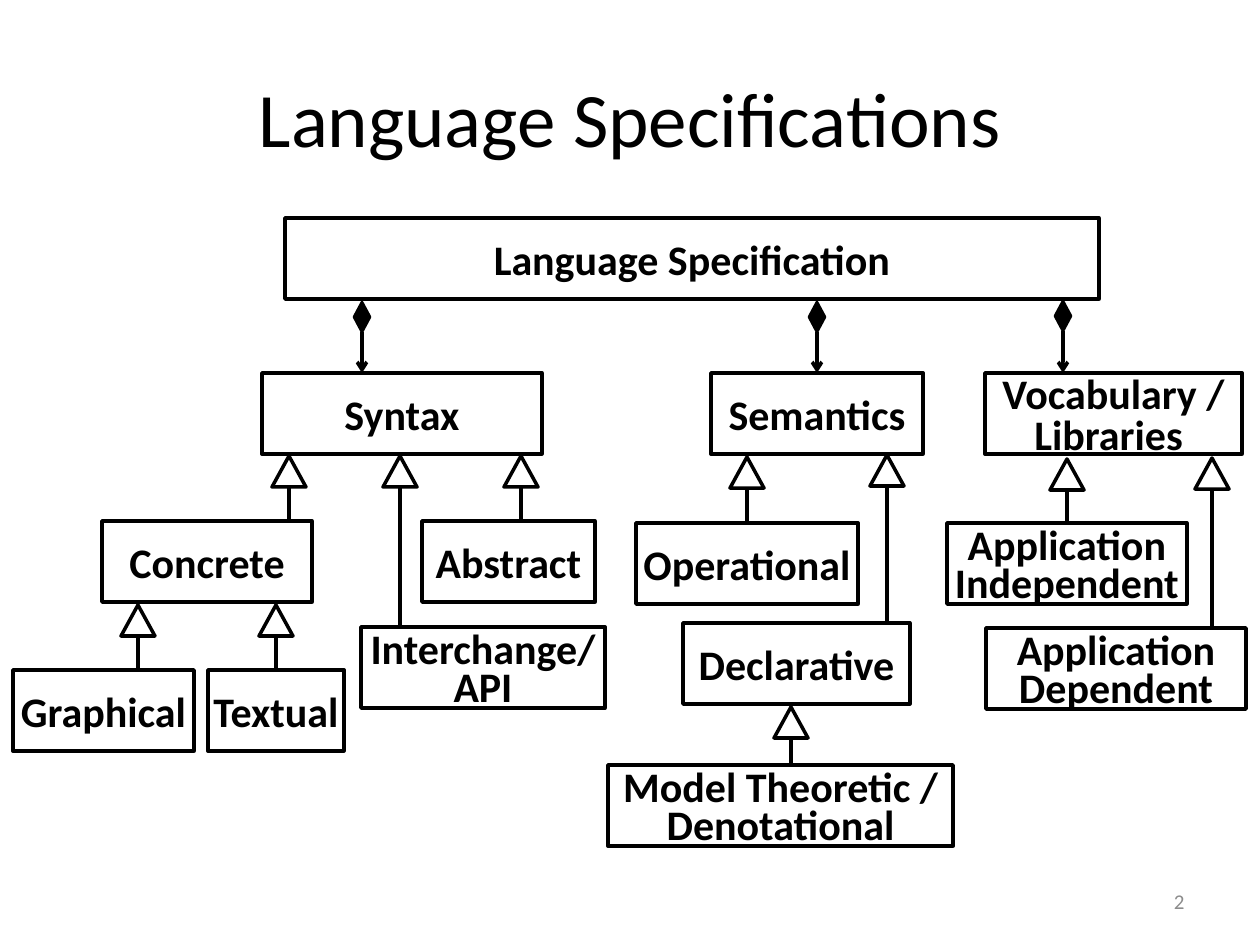
from pptx import Presentation
from pptx.dml.color import RGBColor
from pptx.enum.shapes import MSO_CONNECTOR, MSO_SHAPE
from pptx.enum.text import MSO_ANCHOR, PP_ALIGN
from pptx.oxml.ns import qn
from pptx.util import Emu, Pt
from lxml import etree

STRAIGHT = MSO_CONNECTOR.STRAIGHT
RECTANGLE, TRIANGLE, DIAMOND = (
    MSO_SHAPE.RECTANGLE, MSO_SHAPE.ISOSCELES_TRIANGLE, MSO_SHAPE.DIAMOND)
CENTER, RIGHT = PP_ALIGN.CENTER, PP_ALIGN.RIGHT
MIDDLE = MSO_ANCHOR.MIDDLE

PX_PER_INCH = 126
FONT = "Calibri"
BLACK, WHITE, GRAY = "000000", "FFFFFF", "8C8C8C"
BOX_H = 81
TRI_W, TRI_H = 34, 31
DIAMOND_W, DIAMOND_H = 16, 30
TOP, BOTTOM = 0, 2  # connection sites of a rectangle

# key: text, left, top, width, line spacing
BOXES = {
    "language": ("Language Specification", 285, 218, 814, 1),
    "syntax": ("Syntax", 262, 373, 280, 1),
    "semantics": ("Semantics", 711, 373, 212, 1),
    "vocabulary": ("Vocabulary / Libraries ", 985, 373, 257, 0.8),
    "concrete": ("Concrete", 102, 521, 210, 1),
    "abstract": ("Abstract", 422, 521, 173, 1),
    "interchange": ("Interchange/ API", 361, 627, 244, 0.75),
    "graphical": ("Graphical", 13, 670, 181, 1),
    "textual": ("Textual", 208, 670, 136, 1),
    "operational": ("Operational", 636, 523, 222, 1),
    "declarative": ("Declarative", 683, 623, 227, 1),
    "model": ("Model Theoretic / Denotational", 608, 765, 345, 0.75),
    "independent": ("Application Independent", 947, 523, 240, 0.75),
    "dependent": ("Application\nDependent", 986, 628, 260, 0.75),
}

# child, x of the line, top of the diamond
COMPOSITIONS = [("syntax", 362, 302), ("semantics", 817, 302),
                ("vocabulary", 1063, 301)]

# child, x of the line, apex of the triangle
GENERALIZATIONS = [
    ("concrete", 289, 456), ("interchange", 400, 456), ("abstract", 521, 456),
    ("graphical", 138, 605), ("textual", 276, 605),
    ("operational", 747, 457), ("declarative", 887, 455), ("model", 791, 707),
    ("independent", 1067, 459), ("dependent", 1212, 458),
]


def px(n):
    return Emu(round(n * 914400 / PX_PER_INCH))


def color(hex_string):
    return RGBColor.from_string(hex_string)


def format_text(tf, size, hex_string, align, bold=False, spacing=None):
    tf.vertical_anchor = MIDDLE
    for p in tf.paragraphs:
        p.alignment = align
        p.line_spacing = spacing
        for r in p.runs:
            r.font.name, r.font.size, r.font.bold = FONT, Pt(size), bold
            r.font.color.rgb = color(hex_string)


def add_shape(slide, kind, left, top, width, height, fill, line_pt=2):
    sp = slide.shapes.add_shape(kind, px(left), px(top), px(width), px(height))
    sp.shadow.inherit = False
    sp.fill.solid()
    sp.fill.fore_color.rgb = color(fill)
    sp.line.color.rgb = color(BLACK)
    sp.line.width = Pt(line_pt)
    return sp


def add_box(slide, text, left, top, width, spacing):
    sp = add_shape(slide, RECTANGLE, left, top, width, BOX_H, WHITE)
    tf = sp.text_frame
    tf.text = text
    two_lines = spacing < 1
    tf.word_wrap = two_lines
    tf.margin_left = tf.margin_right = 0
    tf.margin_top, tf.margin_bottom = (px(13), px(4)) if two_lines else (px(6), px(6))
    format_text(tf, 24, BLACK, CENTER, bold=True, spacing=spacing)
    return sp


def add_line(slide, x, y1, y2, arrow=False):
    line = slide.shapes.add_connector(STRAIGHT, px(x), px(y1), px(x), px(y2))
    line.line.color.rgb = color(BLACK)
    line.line.width = Pt(2)
    sp_pr = line.element.spPr
    if arrow:
        etree.SubElement(sp_pr.find(qn("a:ln")), qn("a:tailEnd"), type="arrow")
    etree.SubElement(sp_pr, qn("a:effectLst"))
    return line


def is_middle(key, x):
    """Tell whether x is the middle of the box's top side."""
    _, left, _, width, _ = BOXES[key]
    return x == left + width / 2


def add_composition(slide, boxes, key, x, top):
    line = add_line(slide, x, top + DIAMOND_H, BOXES[key][2], arrow=True)
    if is_middle(key, x):
        line.end_connect(boxes[key], TOP)
    add_shape(slide, DIAMOND, x - DIAMOND_W / 2, top, DIAMOND_W, DIAMOND_H,
              BLACK, 1.5)


def add_generalization(slide, boxes, key, x, apex):
    line = add_line(slide, x, BOXES[key][2], apex + TRI_H)
    if is_middle(key, x):
        line.begin_connect(boxes[key], TOP)
    add_shape(slide, TRIANGLE, x - TRI_W / 2, apex, TRI_W, TRI_H, WHITE)


def add_title(slide, text):
    title = slide.shapes.title
    title.left, title.top, title.width, title.height = map(px, (63, 38, 1134, 158))
    title.text_frame.text = text
    format_text(title.text_frame, 44, BLACK, CENTER)


def add_page_number(slide, text):
    box = slide.shapes.add_textbox(px(903), px(876), px(294), px(50))
    box.text_frame.word_wrap = True
    box.text_frame.text = text
    format_text(box.text_frame, 12, GRAY, RIGHT)


def main():
    prs = Presentation()
    prs.slide_width, prs.slide_height = px(1260), px(945)
    slide = prs.slides.add_slide(prs.slide_layouts[5])
    add_title(slide, "Language Specifications")
    boxes = {key: add_box(slide, *box) for key, box in BOXES.items()}
    for composition in COMPOSITIONS:
        add_composition(slide, boxes, *composition)
    for generalization in GENERALIZATIONS:
        add_generalization(slide, boxes, *generalization)
    add_page_number(slide, "2")
    prs.save("out.pptx")


if __name__ == "__main__":
    main()
